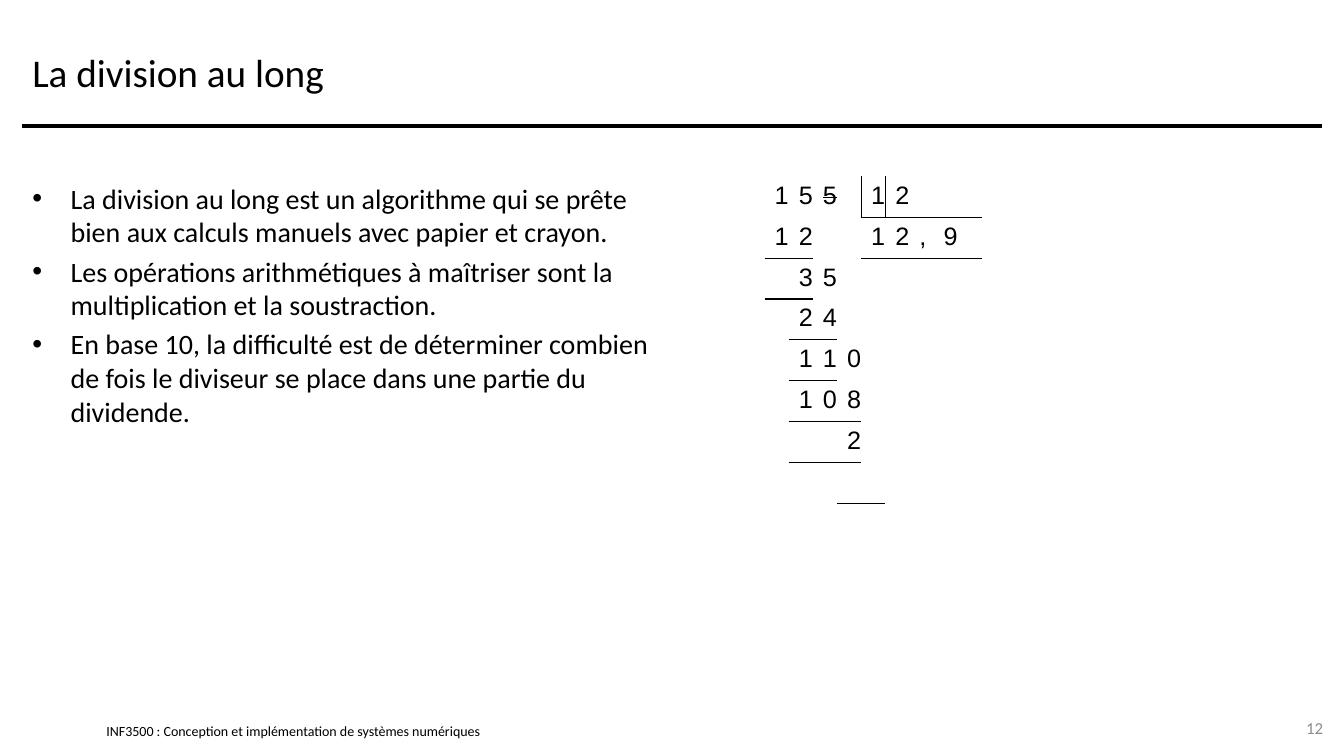
from lxml import etree
from pptx import Presentation
from pptx.dml.color import RGBColor
from pptx.enum.shapes import MSO_CONNECTOR
from pptx.enum.text import MSO_ANCHOR, PP_ALIGN
from pptx.oxml.ns import qn
from pptx.util import Inches, Pt

TOP, MIDDLE = MSO_ANCHOR.TOP, MSO_ANCHOR.MIDDLE
LEFT, RIGHT = PP_ALIGN.LEFT, PP_ALIGN.RIGHT
STRAIGHT = MSO_CONNECTOR.STRAIGHT
BLACK, GREY = "000000", "8C8C8C"
PLAIN_TABLE = "{2D5ABB26-0587-4C30-8999-92F81FD0307C}"

# The slide is a grid of 48 columns by 27 rows of square units
WIDTH, HEIGHT = Inches(13.33), Inches(7.5)
UNIT = HEIGHT / 27

POINTS = [
    "La division au long est un algorithme qui se prête bien aux calculs "
    "manuels avec papier et crayon.",
    "Les opérations arithmétiques à maîtriser sont la multiplication et la "
    "soustraction.",
    "En base 10, la difficulté est de déterminer combien de fois le diviseur "
    "se place dans une partie du dividende.",
]

# One string per row, one character per column
DIGITS = [
    "155 12   ",
    "12  12,9 ",
    " 35      ",
    " 24      ",
    " 110     ",
    " 108     ",
    "   2     ",
    "         ",
    "         ",
]
STRUCK = (0, 2)
# Row above the rule, first column, last column
RULES = [(0, 4, 8), (1, 0, 1), (3, 1, 2), (5, 1, 3), (7, 3, 4)]
DIVISOR_BAR = (0, 3)


def units(*values):
    return [round(value * UNIT) for value in values]


def colour(hex_string):
    return RGBColor.from_string(hex_string)


def add_run(paragraph, text, size, font="Calibri", ink=BLACK):
    run = paragraph.add_run()
    run.text = text
    run.font.size = Pt(size)
    run.font.name = font
    run.font.color.rgb = colour(ink)
    return run


def text_frame(slide, box, anchor=TOP):
    frame = slide.shapes.add_textbox(*units(*box)).text_frame
    frame.word_wrap = True
    frame.vertical_anchor = anchor
    return frame


def add_line_of_text(slide, box, text, size, ink=BLACK, align=LEFT):
    frame = text_frame(slide, box, MIDDLE)
    frame.paragraphs[0].alignment = align
    add_run(frame.paragraphs[0], text, size, ink=ink)
    return frame


def add_header(slide, box):
    left, top, width, height = box
    add_line_of_text(slide, box, "La division au long", 28)
    bottom = top + height
    rule = slide.shapes.add_connector(
        STRAIGHT, *units(left, bottom, left + width, bottom))
    rule.line.color.rgb = colour(BLACK)
    rule.line.width = Pt(3)
    etree.SubElement(rule._element.spPr, qn("a:effectLst"))


def add_points(slide, box):
    frame = text_frame(slide, box)
    for index, point in enumerate(POINTS):
        paragraph = frame.add_paragraph() if index else frame.paragraphs[0]
        if index:
            paragraph.space_before = Pt(4)
        properties = paragraph._p.get_or_add_pPr()
        properties.set("marL", str(Inches(0.38)))
        properties.set("indent", str(-Inches(0.38)))
        etree.SubElement(properties, qn("a:buFont"), typeface="Arial")
        etree.SubElement(properties, qn("a:buChar"), char="•")
        add_run(paragraph, point, 20)


def cell_borders(row, column):
    """Sides of a cell that touch a rule, in the order the schema asks for."""
    sides = []
    if (row, column - 1) == DIVISOR_BAR:
        sides.append("L")
    if (row, column) == DIVISOR_BAR:
        sides.append("R")
    for side, above in (("T", row - 1), ("B", row)):
        if any(above == rule and first <= column <= last
               for rule, first, last in RULES):
            sides.append(side)
    return sides


def draw_border(cell, side):
    properties = cell._tc.get_or_add_tcPr()
    line = etree.SubElement(properties, qn("a:ln" + side), w=str(Pt(1)))
    fill = etree.SubElement(line, qn("a:solidFill"))
    etree.SubElement(fill, qn("a:srgbClr"), val=BLACK)


def add_long_division(slide, box):
    rows, columns = len(DIGITS), len(DIGITS[0])
    left, top, width, height = units(*box)
    division = slide.shapes.add_table(
        rows, columns, left, top, width, height).table
    division.first_row = division.horz_banding = False
    division._tbl.tblPr.find(qn("a:tableStyleId")).text = PLAIN_TABLE
    for row, digits in enumerate(DIGITS):
        for column, digit in enumerate(digits):
            cell = division.cell(row, column)
            for side in cell_borders(row, column):
                draw_border(cell, side)
            cell.fill.background()
            paragraph = cell.text_frame.paragraphs[0]
            paragraph.alignment = RIGHT
            if digit == " ":
                paragraph.font.size = Pt(18)
                continue
            run = add_run(paragraph, digit, 18, "Arial")
            if (row, column) == STRUCK:
                run._r.get_or_add_rPr().set("strike", "sngStrike")


def add_footer(slide, course_box, number_box):
    course = add_line_of_text(
        slide, course_box,
        "INF3500 : Conception et implémentation de systèmes numériques", 10)
    course.margin_left = course.margin_right = 0
    course.margin_top = course.margin_bottom = 0
    add_line_of_text(slide, number_box, "12", 12, GREY, RIGHT)


def main():
    deck = Presentation()
    deck.slide_width, deck.slide_height = WIDTH, HEIGHT
    slide = deck.slides.add_slide(deck.slide_layouts[6])
    add_footer(slide, (3.8, 25.8, 18.4, 0.6), (45.2, 25.28, 2.4, 1.44))
    add_header(slide, (0.8, 0.6, 46.4, 3.9))
    add_points(slide, (0.8, 6.3, 22.8, 18.3))
    add_long_division(slide, (27.3, 6.3, 7.4, 13.14))
    deck.save("out.pptx")


if __name__ == "__main__":
    main()
